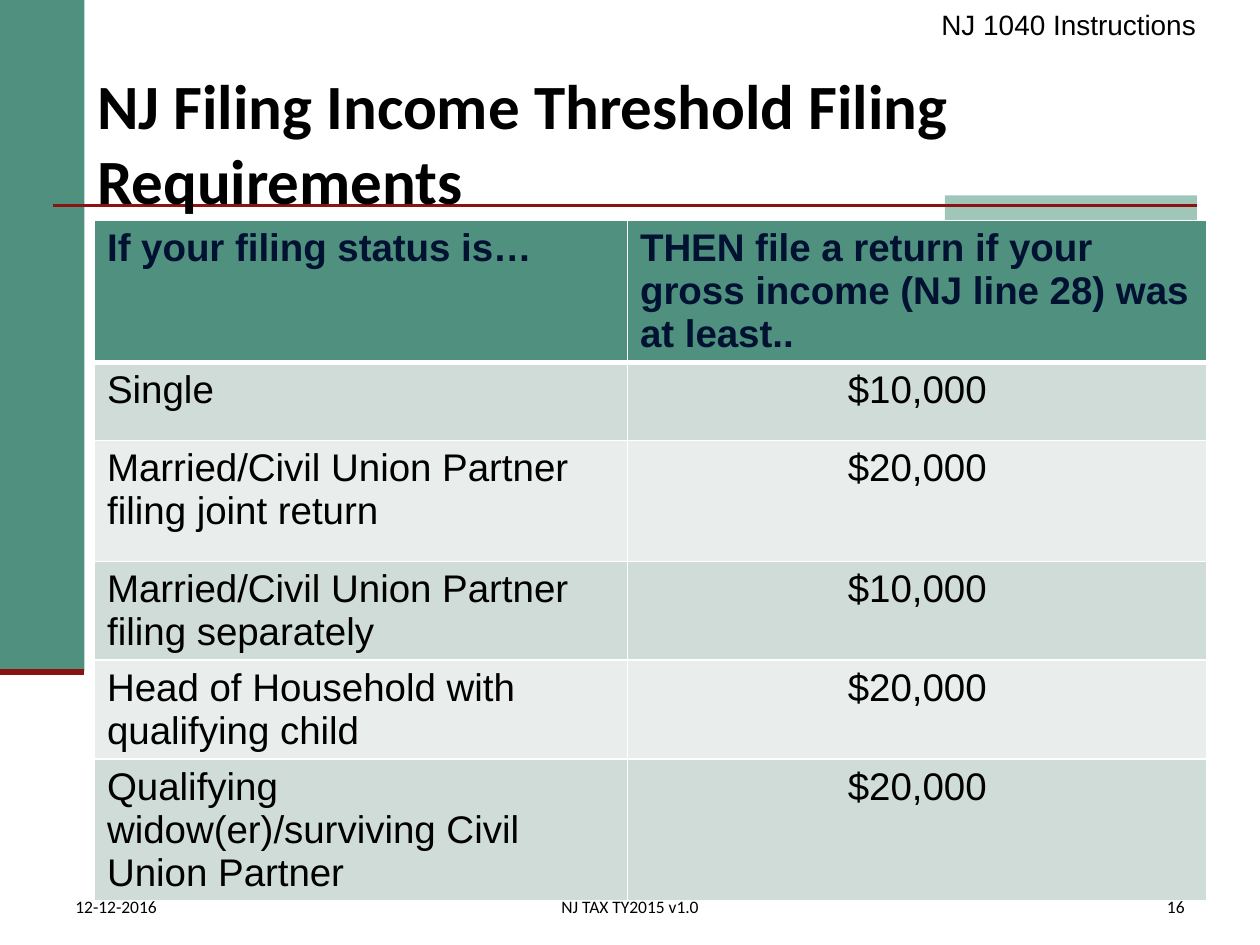
from lxml import etree
from pptx import Presentation
from pptx import util as u
from pptx.dml.color import RGBColor
from pptx.enum import shapes, text
from pptx.oxml.ns import qn

TITLE = "NJ Filing Income Threshold Filing Requirements"
HEADER = ("If your filing status is…",
          "THEN file a return if your gross income (NJ line 28) was at least..")
THRESHOLDS = [
    ("Single", "$10,000"),
    ("Married/Civil Union Partner filing joint return", "$20,000"),
    ("Married/Civil Union Partner filing separately", "$10,000"),
    ("Head of Household with qualifying child", "$20,000"),
    ("Qualifying widow(er)/surviving Civil Union Partner", "$20,000"),
]
COLUMN_WIDTHS = (4.23, 4.6)
ROW_HEIGHTS = (0.83, 0.62, 0.96, 0.77, 0.77, 0.77)
GREEN, LIGHT_GREEN, RED = "4F917E", "A0C6BA", "891411"
BANDS = ("E9EEEC", "D0DCD8")
LEFT, CENTER, RIGHT = text.PP_ALIGN.LEFT, text.PP_ALIGN.CENTER, text.PP_ALIGN.RIGHT
TOP, MIDDLE, BOTTOM = (text.MSO_ANCHOR.TOP, text.MSO_ANCHOR.MIDDLE,
                       text.MSO_ANCHOR.BOTTOM)

BLOCKS = [((0, 0, 0.67, 5.33), GREEN), ((7.5, 1.55, 2, 0.2), LIGHT_GREEN)]
RULES = [((0.42, 1.63, 9.5, 1.63), 1.5), ((0, 5.33, 0.67, 5.33), 3.5)]
SMALL = {"name": "Calibri", "size": u.Pt(10)}
FOOTERS = [
    ("12-12-2016", (0.5, 7, 2.17, 0.33), LEFT),
    ("NJ TAX TY2015 v1.0", (3.31, 7, 3.38, 0.33), CENTER),
    ("16", (7.42, 7, 2.08, 0.33), RIGHT),
]


def inches(values):
    return [u.Inches(value) for value in values]


def color(target, value):
    target.rgb = RGBColor.from_string(value)


def paint(fill, value):
    fill.solid()
    color(fill.fore_color, value)


def write(frame, words, font, align=LEFT, ink="000000"):
    para = frame.paragraphs[0]
    para.alignment = align
    span = para.add_run()
    span.text = words
    for name, value in font.items():
        setattr(span.font, name, value)
    color(span.font.color, ink)


def add_text(page, words, place, align, font, **frame_format):
    frame = page.shapes.add_textbox(*inches(place)).text_frame
    for name, value in frame_format.items():
        setattr(frame, name, value)
    write(frame, words, font, align)


def add_borders(cell, widths):
    properties = cell._tc.get_or_add_tcPr()
    for index, (side, points) in enumerate(widths.items()):
        line = etree.Element(qn("a:ln" + side), w=str(u.Pt(points)))
        fill = etree.SubElement(line, qn("a:solidFill"))
        etree.SubElement(fill, qn("a:srgbClr"), val="FFFFFF")
        properties.insert(index, line)


def add_decoration(page):
    for place, shade in BLOCKS:
        block = page.shapes.add_shape(shapes.MSO_SHAPE.RECTANGLE, *inches(place))
        block.shadow.inherit = False
        paint(block.fill, shade)
        block.line.fill.background()
    for ends, points in RULES:
        rule = page.shapes.add_connector(shapes.MSO_CONNECTOR.STRAIGHT, *inches(ends))
        rule.line.width = u.Pt(points)
        color(rule.line.color, RED)
        etree.SubElement(rule.element.spPr, qn("a:effectLst"))


def add_title(page):
    title = page.shapes.title
    title.left, title.top, title.width, title.height = inches((0.67, 0.25, 8.83, 1.75))
    title.text_frame.vertical_anchor = MIDDLE
    write(title.text_frame, TITLE, {"name": "Calibri", "size": u.Pt(36), "bold": True})
    page.shapes.element.append(title.element)


def add_thresholds(page):
    rows = [HEADER] + THRESHOLDS
    place = inches((0.75, 1.75, sum(COLUMN_WIDTHS), sum(ROW_HEIGHTS)))
    table = page.shapes.add_table(len(rows), len(HEADER), *place).table
    table.horz_banding = False
    for column, width in zip(table.columns, COLUMN_WIDTHS):
        column.width = u.Inches(width)
    for number, (row, height) in enumerate(zip(table.rows, ROW_HEIGHTS)):
        row.height = u.Inches(height)
        header = number == 0
        widths = {"L": 1, "R": 1, "T": 3 if number == 1 else 1, "B": 3 if header else 1}
        font = {"name": "Arial", "size": u.Pt(22), "bold": header}
        for index, (cell, words) in enumerate(zip(row.cells, rows[number])):
            paint(cell.fill, GREEN if header else BANDS[number % 2])
            add_borders(cell, widths)
            align = CENTER if index and not header else LEFT
            write(cell.text_frame, words, font, align, "001132" if header else "000000")


def main():
    deck = Presentation()
    deck.slide_width, deck.slide_height = inches((10, 7.5))
    page = deck.slides.add_slide(deck.slide_layouts[5])
    paint(page.background.fill, "FFFFFF")
    add_decoration(page)
    add_title(page)
    add_thresholds(page)
    add_text(page, "NJ 1040 Instructions", (7.34, 0.06, 2.25, 0.27), RIGHT,
             {"name": "Arial", "size": u.Pt(16)}, word_wrap=False,
             vertical_anchor=TOP, margin_top=0, margin_bottom=0,
             auto_size=text.MSO_AUTO_SIZE.SHAPE_TO_FIT_TEXT)
    for words, place, align in FOOTERS:
        add_text(page, words, place, align, SMALL, word_wrap=True,
                 vertical_anchor=BOTTOM)
    deck.save("out.pptx")


if __name__ == "__main__":
    main()
